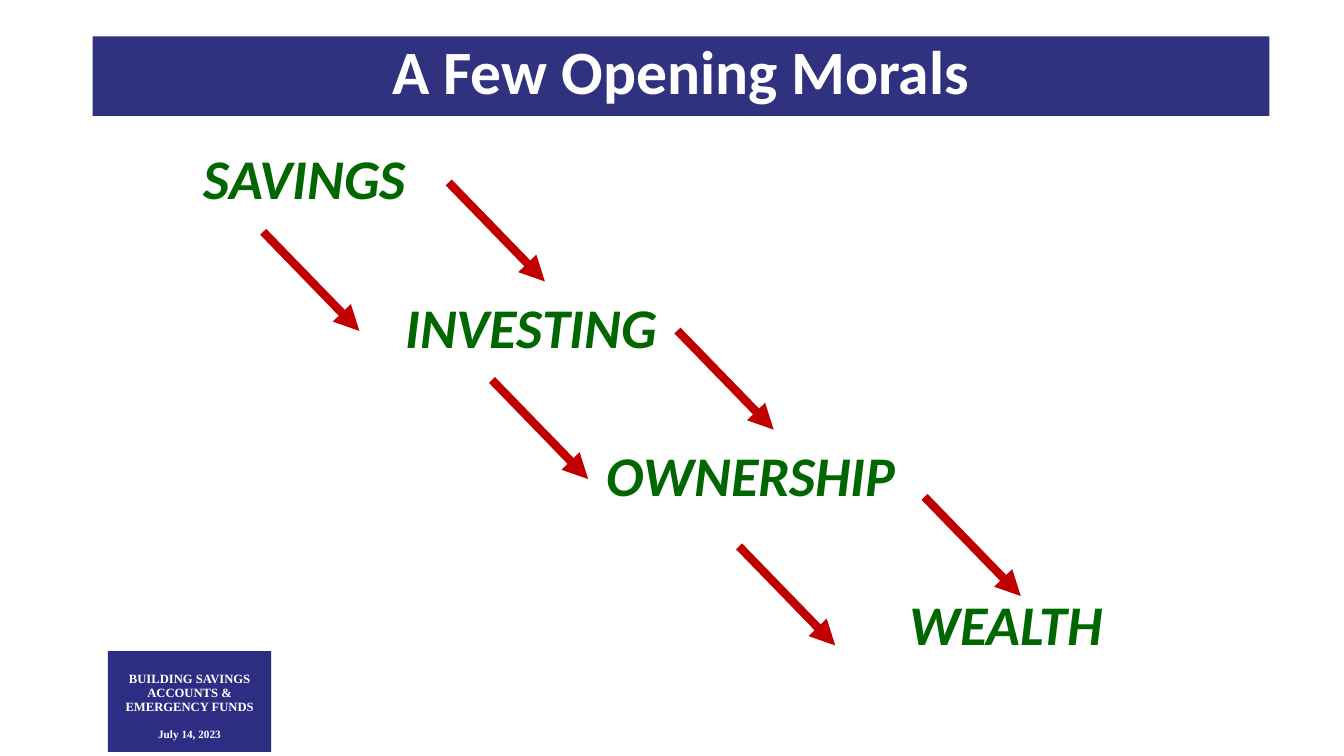
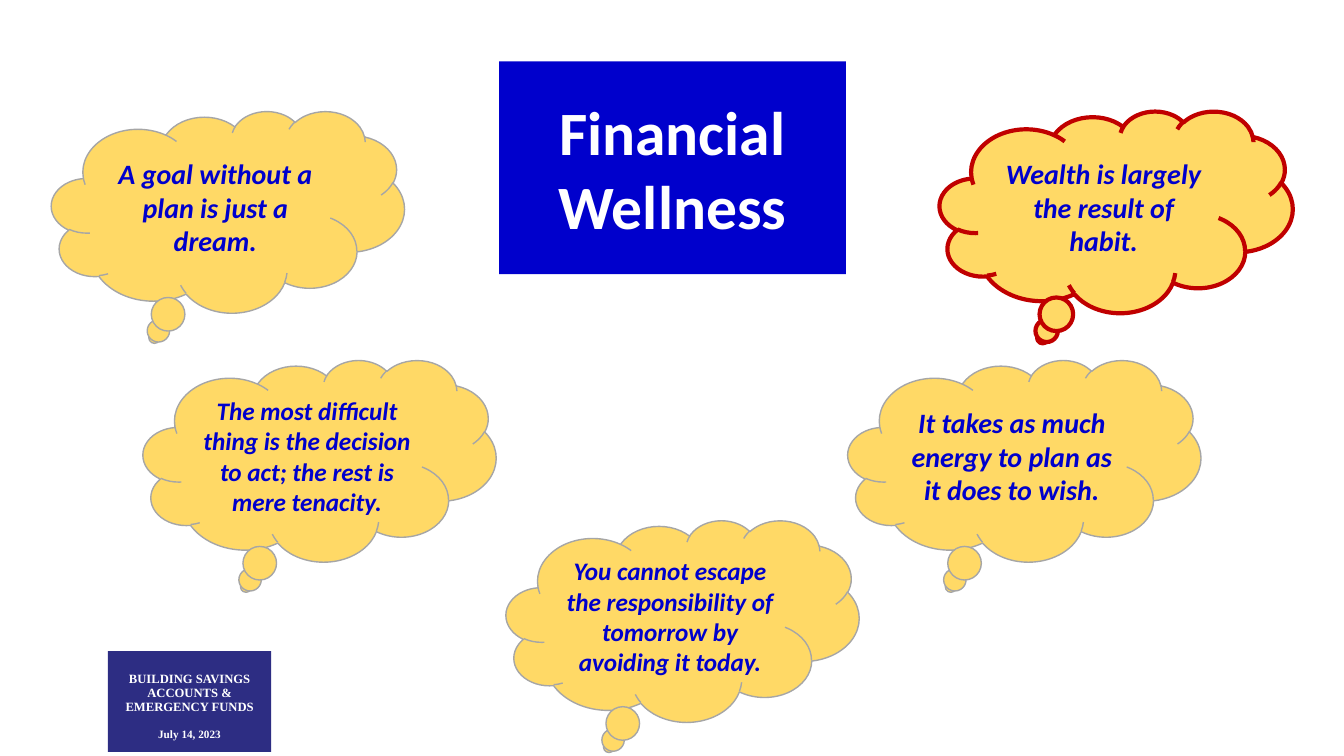
from dataclasses import dataclass
from itertools import product

from lxml.etree import SubElement
from pptx import Presentation
from pptx.dml.color import RGBColor
from pptx.enum.shapes import MSO_CONNECTOR, MSO_SHAPE
from pptx.enum.text import MSO_ANCHOR, MSO_AUTO_SIZE, PP_ALIGN
from pptx.oxml.ns import qn
from pptx.util import Inches, Pt

WHITE = RGBColor(0xFF, 0xFF, 0xFF)
NAVY = RGBColor(0x30, 0x31, 0x7F)
FOOTER_NAVY = RGBColor(0x2D, 0x2D, 0x83)
BLUE = RGBColor(0x00, 0x00, 0xCC)
GREEN = RGBColor(0x00, 0x66, 0x00)
RED = RGBColor(0xC0, 0x00, 0x00)
GOLD = RGBColor(0xFF, 0xD9, 0x66)
GREY = RGBColor(0xA6, 0xA6, 0xA6)
SANS, SERIF = "Calibri", "Times New Roman"


@dataclass
class Box:
    """A region whose inner areas are given in percent of its size."""
    x: int
    y: int
    w: int
    h: int

    def point(self, px, py):
        """Return the position at the given percentages."""
        return int(self.x + self.w * px / 100), int(self.y + self.h * py / 100)

    def area(self, px, py, pw, ph):
        """Return the inner region at the given percentages."""
        return Box(*self.point(px, py), int(self.w * pw / 100), int(self.h * ph / 100))

    def rect(self):
        """Return left, top, width and height."""
        return self.x, self.y, self.w, self.h


def add_text(tf, text, size, color=WHITE, font=SANS, italic=False,
             align=PP_ALIGN.CENTER, spacing=1.0, before=0, indent=0):
    """Write one bold paragraph, using the empty first one if there is one."""
    p = tf.paragraphs[0] if not tf.text else tf.add_paragraph()
    p.alignment, p.line_spacing, p.space_before = align, spacing, Pt(before)
    if indent:
        p._p.get_or_add_pPr().set("marL", str(int(indent)))
    r = p.add_run()
    r.text = text
    r.font.name, r.font.size = font, Pt(size)
    r.font.bold, r.font.italic = True, italic
    r.font.color.rgb = color


def add_panel(slide, box, kind, fill, line=None, width=1):
    """Add a filled shape and return it."""
    sp = slide.shapes.add_shape(kind, *box.rect())
    sp.shadow.inherit = False
    sp.fill.solid()
    sp.fill.fore_color.rgb = fill
    if line is None:
        sp.line.fill.background()
    else:
        sp.line.color.rgb = line
        sp.line.width = Pt(width)
    sp.text_frame.word_wrap = True
    sp.text_frame.vertical_anchor = MSO_ANCHOR.MIDDLE
    return sp


def set_title(slide, box, text, fill, shape="rect", anchor=MSO_ANCHOR.MIDDLE, spacing=1.0):
    """Place and format the title placeholder as a filled panel."""
    sp = slide.shapes.title
    sp.left, sp.top, sp.width, sp.height = box.rect()
    geom = SubElement(sp.element.spPr, qn("a:prstGeom"), prst=shape)
    SubElement(geom, qn("a:avLst"))
    sp.fill.solid()
    sp.fill.fore_color.rgb = fill
    tf = sp.text_frame
    tf.word_wrap, tf.auto_size, tf.vertical_anchor = True, MSO_AUTO_SIZE.NONE, anchor
    add_text(tf, text, 44, spacing=spacing)


def add_footer(slide, box):
    """Draw the footer badge and move it to the shared layout."""
    sp = add_panel(slide, box, MSO_SHAPE.RECTANGLE, FOOTER_NAVY)
    tf = sp.text_frame
    tf.margin_top = Inches(0.16)
    add_text(tf, "BUILDING SAVINGS ACCOUNTS & EMERGENCY FUNDS", 9, font=SERIF, spacing=0.9)
    add_text(tf, "July 14, 2023", 8, font=SERIF, spacing=0.9, before=11)
    slide.slide_layout.shapes.element.append(sp.element)


def add_arrow(slide, start, end):
    """Draw a thick red arrow between two points."""
    cx = slide.shapes.add_connector(MSO_CONNECTOR.STRAIGHT, *start, *end)
    cx.line.color.rgb = RED
    cx.line.width = Pt(6)
    SubElement(cx.element.spPr.find(qn("a:ln")), qn("a:tailEnd"), type="triangle")
    SubElement(cx.element.spPr, qn("a:effectLst"))


def add_staircase(slide, box):
    """Draw the descending words and the pairs of arrows between them."""
    tf = slide.shapes.add_textbox(*box.rect()).text_frame
    tf.word_wrap = True
    column = box.w / 11.5
    steps = [("SAVINGS", 1), ("INVESTING", 3), ("OWNERSHIP", 5), ("WEALTH", 8)]
    for i, (word, col) in enumerate(steps):
        add_text(tf, word, 40, color=GREEN, italic=True, align=PP_ALIGN.LEFT,
                 spacing=0.9, before=63 if i else 0, indent=col * column)
    starts = [(14.7, 16.04), (34.43, 43.77), (55.74, 74.91)]
    for (x, y), (dx, dy) in product(starts, [(0, 0), (16, -9.25)]):
        add_arrow(slide, box.point(x + dx, y + dy), box.point(x + dx + 8.3, y + dy + 18.55))


def add_clouds(slide, box):
    """Draw the five sayings as thought clouds."""
    clouds = [
        (3.83, 14.67, 20, GREY, 1, "A goal without a plan is just a dream."),
        (10.65, 47.6, 18, GREY, 1,
         "The most difficult thing is the decision to act; the rest is mere tenacity."),
        (69.92, 14.67, 20, RED, 3, "Wealth is largely the result of habit."),
        (63.09, 47.6, 20, GREY, 1, "It takes as much energy to plan as it does to wish."),
        (37.66, 68.8, 18, GREY, 1,
         "You cannot escape the responsibility of tomorrow by avoiding it today."),
    ]
    for x, y, size, line, width, text in clouds:
        sp = add_panel(slide, box.area(x, y, 26.26, 26.67), MSO_SHAPE.CLOUD_CALLOUT,
                       GOLD, line, width)
        add_text(sp.text_frame, text, size, color=BLUE, italic=True)


def morals_slide(slide, box):
    """Build the slide of opening morals."""
    set_title(slide, box.area(6.9, 4.8, 87.55, 10.53), "A Few Opening Morals", NAVY,
              anchor=MSO_ANCHOR.TOP, spacing=0.9)
    add_staircase(slide, box.area(6.9, 19.33, 86.27, 70.67))


def wellness_slide(slide, box):
    """Build the slide of financial wellness sayings."""
    set_title(slide, box.area(37.13, 8.13, 25.81, 28.13), "Financial Wellness", BLUE,
              shape="roundRect")
    add_clouds(slide, box)


def main():
    """Build and save the presentation."""
    prs = Presentation()
    prs.slide_width, prs.slide_height = Inches(13.33), Inches(7.5)
    page = Box(0, 0, prs.slide_width, prs.slide_height)
    layout = prs.slide_layouts.get_by_name("Title Only")
    for i, build in enumerate((morals_slide, wellness_slide)):
        slide = prs.slides.add_slide(layout)
        if i == 0:
            add_footer(slide, page.area(8.03, 86.13, 12.15, 13.33))
        build(slide, page)
    prs.save("out.pptx")


if __name__ == "__main__":
    main()
